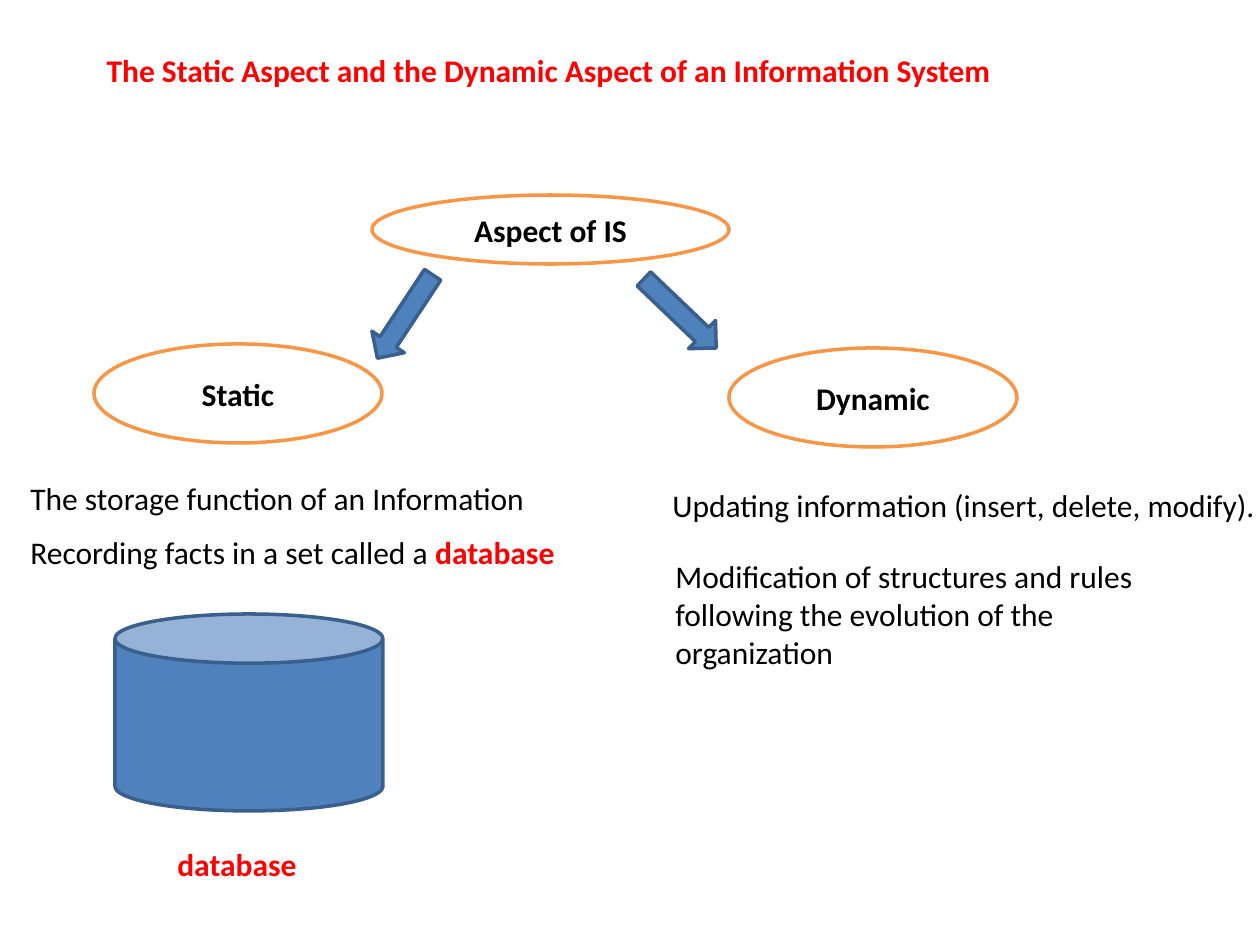
import pptx
import pptx.util
import pptx.dml.color
import pptx.enum.shapes
import pptx.enum.text

SHAPES = pptx.enum.shapes.MSO_SHAPE
ALIGN = pptx.enum.text.PP_ALIGN
ANCHOR = pptx.enum.text.MSO_ANCHOR
EMU_PER_PX = 914400 // 126
COLOURS = {
    "text": "000000",
    "accent": "FF0000",
    "paper": "FFFFFF",
    "outline": "F79646",
    "blue": "4F81BD",
    "blue_edge": "3A5F8C",
}


def px(*lengths):
    return [pptx.util.Emu(length * EMU_PER_PX) for length in lengths]


def colour(name):
    return pptx.dml.color.RGBColor.from_string(COLOURS[name])


def format_run(run, name="text", bold=False):
    run.font.name = "Calibri"
    run.font.size = pptx.util.Pt(18)
    run.font.bold = bold
    run.font.color.rgb = colour(name)


def place_title(slide, text, box):
    title = slide.shapes.title
    title.left, title.top, title.width, title.height = px(*box)
    frame = title.text_frame
    frame.text = text
    frame.vertical_anchor = ANCHOR.TOP
    frame.auto_size = pptx.enum.text.MSO_AUTO_SIZE.NONE
    frame.paragraphs[0].alignment = ALIGN.LEFT
    format_run(frame.paragraphs[0].runs[0], "accent", True)


def add_text(slide, box, plain="", highlight="", wrap=True):
    frame = slide.shapes.add_textbox(*px(*box)).text_frame
    frame.word_wrap = wrap
    paragraph = frame.paragraphs[0]
    for text, name, bold in ((plain, "text", False), (highlight, "accent", True)):
        if text:
            run = paragraph.add_run()
            run.text = text
            format_run(run, name, bold)


def add_figure(slide, kind, box, fill="blue", line="blue_edge", rotation=0):
    shape = slide.shapes.add_shape(kind, *px(*box))
    shape.shadow.inherit = False
    shape.rotation = rotation
    shape.fill.solid()
    shape.fill.fore_color.rgb = colour(fill)
    shape.line.color.rgb = colour(line)
    shape.line.width = pptx.util.Pt(2)
    return shape


def add_aspect(slide, text, box):
    frame = add_figure(slide, SHAPES.OVAL, box, "paper", "outline").text_frame
    frame.text = text
    frame.vertical_anchor = ANCHOR.MIDDLE
    frame.paragraphs[0].alignment = ALIGN.CENTER
    format_run(frame.paragraphs[0].runs[0], bold=True)


def main():
    presentation = pptx.Presentation()
    presentation.slide_width = pptx.util.Inches(10)
    presentation.slide_height = pptx.util.Inches(7.5)
    slide = presentation.slides.add_slide(presentation.slide_layouts[5])

    place_title(
        slide,
        "The Static Aspect and the Dynamic Aspect of an Information System",
        (94, 45, 983, 50),
    )
    add_aspect(slide, "Aspect of IS", (372, 195, 357, 69))
    add_aspect(slide, "Static", (94, 344, 288, 99))
    add_aspect(slide, "Dynamic", (729, 348, 288, 99))
    add_figure(slide, SHAPES.RIGHT_ARROW, (630, 294, 100, 39), rotation=43.7)
    add_figure(slide, SHAPES.RIGHT_ARROW, (355, 297, 100, 39), rotation=123.5)

    add_text(slide, (18, 473, 533, 50),
             "The storage function of an Information", wrap=False)
    add_text(slide, (18, 527, 553, 50),
             "Recording facts in a set called a ", "database", wrap=False)
    add_text(slide, (660, 480, 630, 50),
             "Updating information (insert, delete, modify).")
    add_text(slide, (663, 551, 562, 127),
             "Modification of structures and rules following the evolution of the organization")
    add_figure(slide, SHAPES.CAN, (115, 614, 268, 197))
    add_text(slide, (165, 839, 145, 50), highlight="database", wrap=False)

    presentation.save("out.pptx")


if __name__ == "__main__":
    main()
